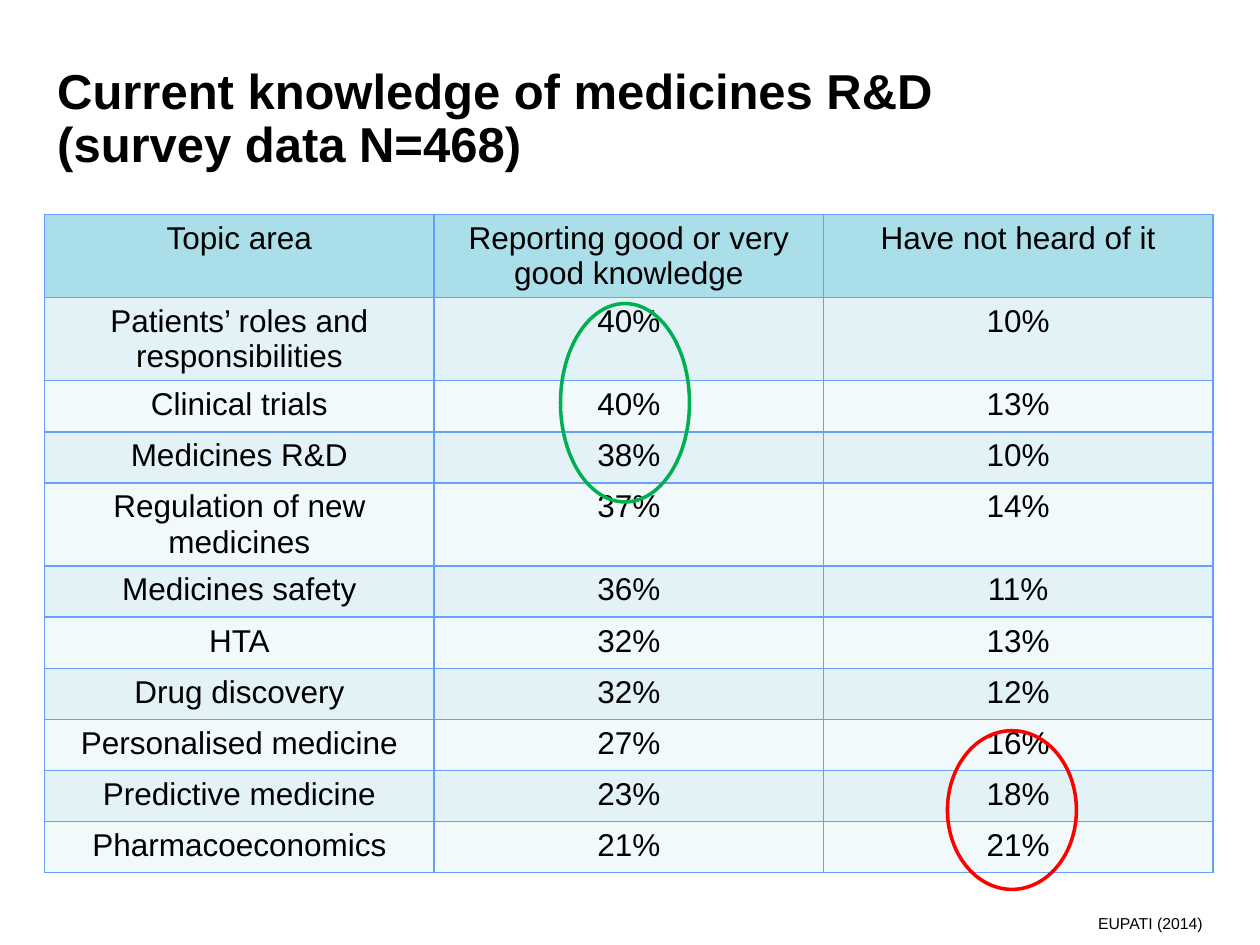
from lxml import etree
from pptx import Presentation
from pptx.dml.color import RGBColor
from pptx.enum.shapes import MSO_SHAPE
from pptx.enum.text import MSO_ANCHOR, PP_ALIGN
from pptx.oxml.ns import qn
from pptx.util import Cm, Pt

ELLIPSE = MSO_SHAPE.OVAL
MIDDLE = MSO_ANCHOR.MIDDLE
LEFT, CENTER = PP_ALIGN.LEFT, PP_ALIGN.CENTER
BORDER = "66A0FA"
HEADER_FILL = "AADEE8"
BAND_FILLS = ["F1F9FB", "E2F2F6"]


def color(hex_string):
    return RGBColor.from_string(hex_string)


def format_text(frame, size, align, bold=False):
    for para in frame.paragraphs:
        para.alignment = align
        for span in para.runs:
            span.font.name = "Arial"
            span.font.size = Pt(size)
            span.font.bold = bold
            span.font.color.rgb = color("000000")


deck = Presentation()
deck.slide_width, deck.slide_height = Cm(25.4), Cm(19.05)
page = deck.slides.add_slide(deck.slide_layouts[5])

# Title
title = page.shapes.title
title.left, title.top, title.width, title.height = Cm(0.9), Cm(1.12), Cm(19.7), Cm(2.6)
title.text_frame.text = "Current knowledge of medicines R&D (survey data N=468)"
title.text_frame.word_wrap = True
title.text_frame.vertical_anchor = MIDDLE
title.text_frame.paragraphs[0].line_spacing = 0.9
format_text(title.text_frame, 28, LEFT, bold=True)

# Survey table
survey = [
    ("Topic area", "Reporting good or very good knowledge", "Have not heard of it"),
    ("Patients’ roles and responsibilities", "40%", "10%"),
    ("Clinical trials", "40%", "13%"),
    ("Medicines R&D", "38%", "10%"),
    ("Regulation of new medicines", "37%", "14%"),
    ("Medicines safety", "36%", "11%"),
    ("HTA", "32%", "13%"),
    ("Drug discovery", "32%", "12%"),
    ("Personalised medicine", "27%", "16%"),
    ("Predictive medicine", "23%", "18%"),
    ("Pharmacoeconomics", "21%", "21%"),
]
row_height = Cm(1.03)
table = page.shapes.add_table(len(survey), 3, Cm(0.9), Cm(4.32), Cm(23.55),
                              row_height * len(survey)).table
for row in table.rows:
    row.height = row_height

for row_index, values in enumerate(survey):
    fill = BAND_FILLS[row_index % 2] if row_index else HEADER_FILL
    for column_index, value in enumerate(values):
        cell = table.cell(row_index, column_index)
        cell.text_frame.text = value
        format_text(cell.text_frame, 18, CENTER)
        # Borders come before the fill in the cell properties
        properties = cell._tc.get_or_add_tcPr()
        for side in ("a:lnL", "a:lnR", "a:lnT", "a:lnB"):
            line = etree.SubElement(properties, qn(side), w=str(Pt(1)))
            solid = etree.SubElement(line, qn("a:solidFill"))
            etree.SubElement(solid, qn("a:srgbClr"), val=BORDER)
        cell.fill.solid()
        cell.fill.fore_color.rgb = color(fill)

# Rings around the highest values
rings = [
    (19.1, 14.73, 3.2, "FF0000"),
    (11.3, 6.12, 4, "00B050"),
]
for left, top, height, line_color in rings:
    ring = page.shapes.add_shape(ELLIPSE, Cm(left), Cm(top), Cm(2.6), Cm(height))
    ring.shadow.inherit = False
    ring.fill.background()
    ring.line.color.rgb = color(line_color)
    ring.line.width = Pt(2)

# Source
source = page.shapes.add_textbox(Cm(22.1), Cm(18.42), Cm(2.18), Cm(0.38)).text_frame
source.margin_left = source.margin_right = source.margin_top = source.margin_bottom = 0
source.word_wrap = False
source.vertical_anchor = MIDDLE
source.text = "EUPATI (2014)"
format_text(source, 9, CENTER)

deck.save("out.pptx")
